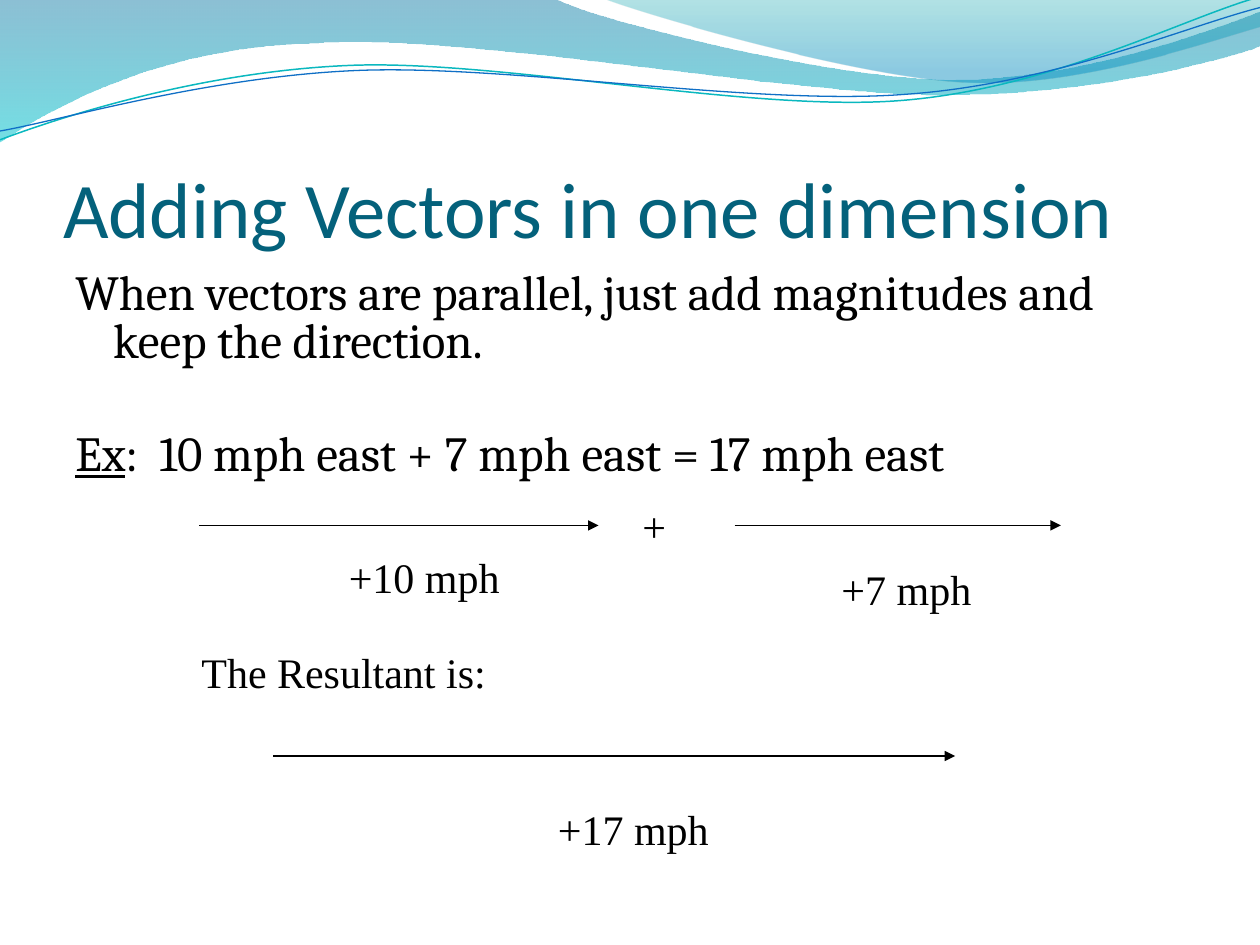
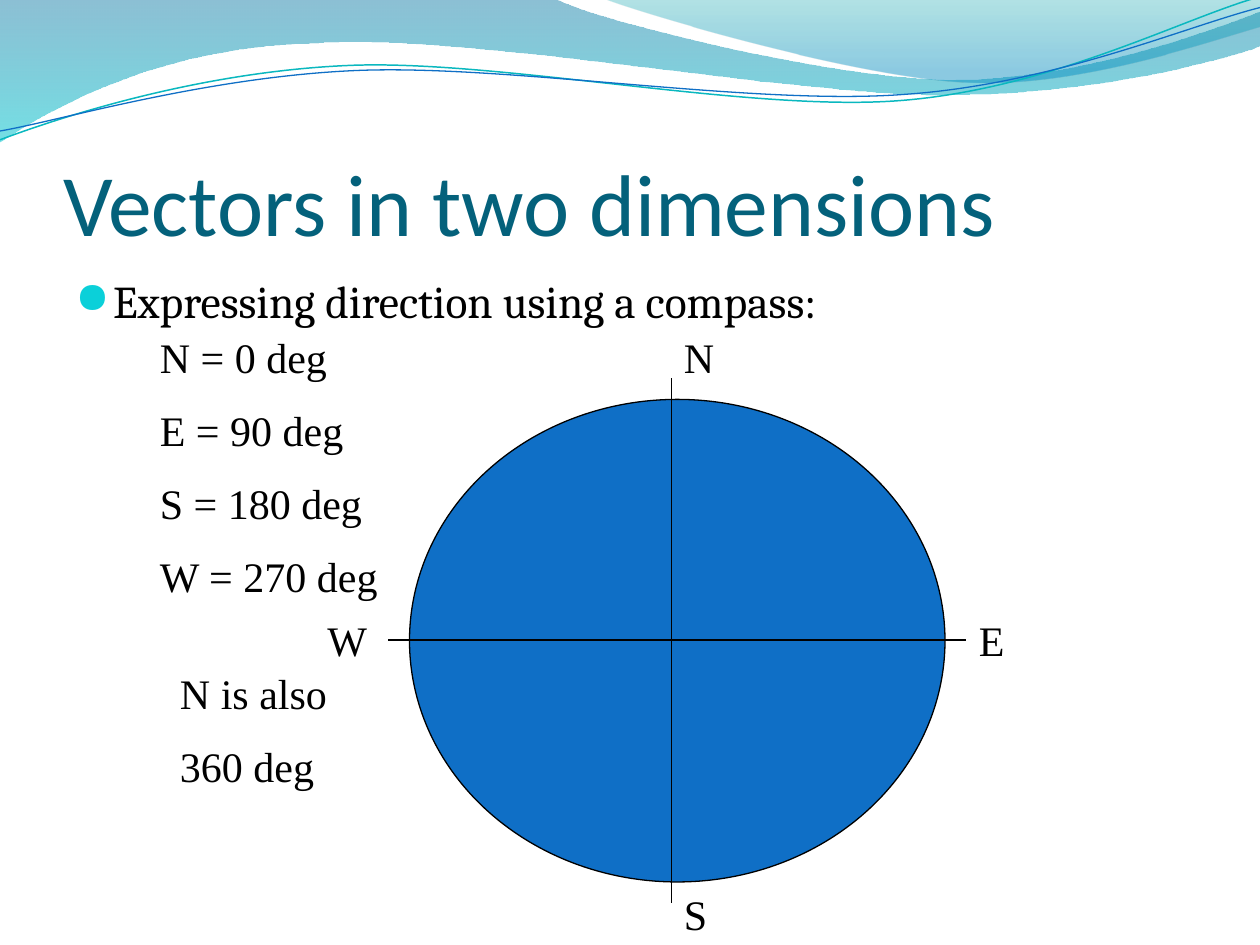
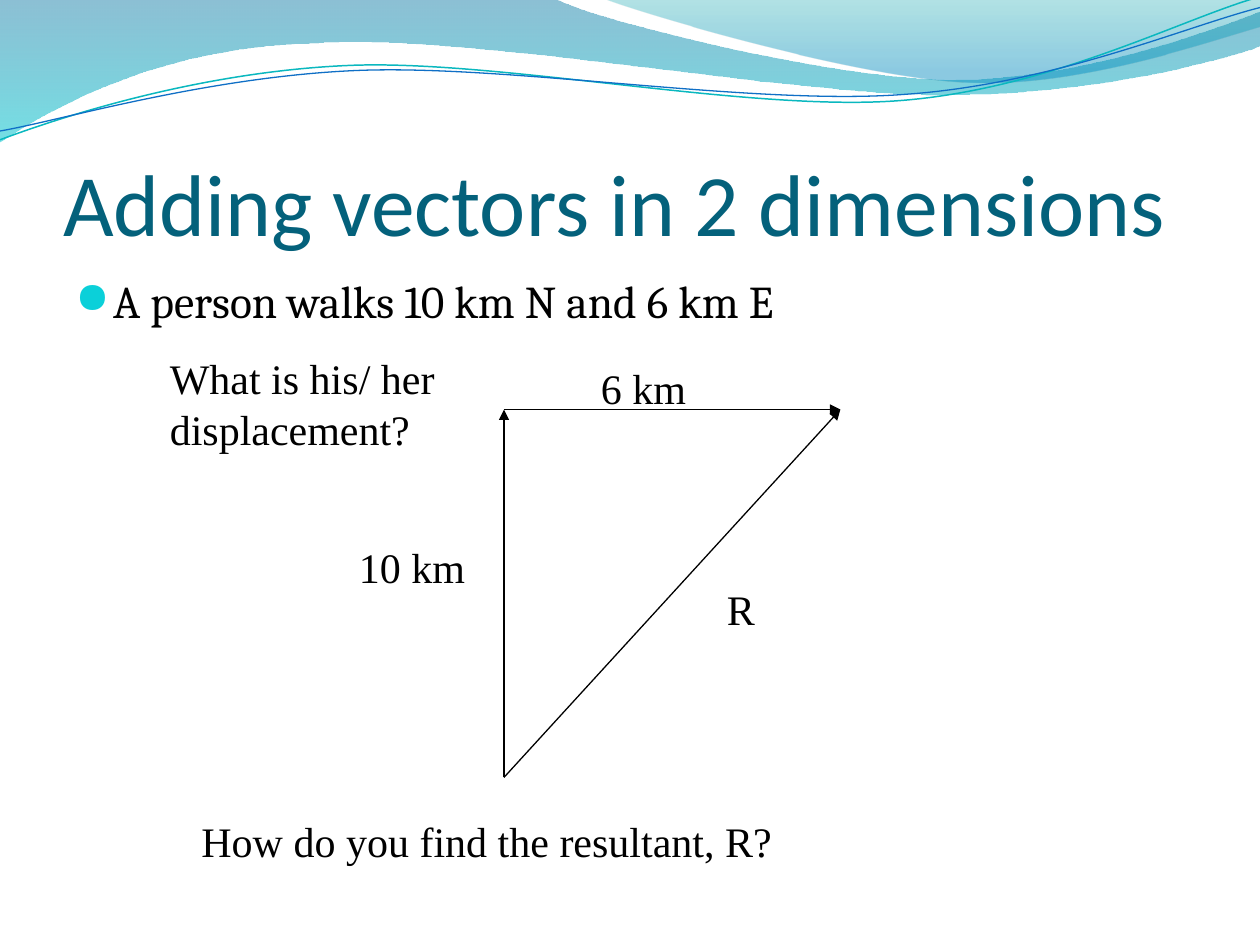
"""Build three physics slides on vectors under a shared wave banner."""
from itertools import islice

from pptx import Presentation
from pptx.dml.color import RGBColor
from pptx.enum.shapes import MSO_CONNECTOR, MSO_SHAPE
from pptx.enum.text import MSO_ANCHOR, MSO_AUTO_SIZE, PP_ALIGN
from pptx.oxml.ns import qn
from pptx.oxml.xmlchemy import OxmlElement
from pptx.util import Pt

PX = 9144
TITLE_ONLY = 5
COLORS = {
    "title": "04617B", "text": "000000", "line": "000000", "bullet": "0BD0D9",
    "disc": "0F6FC6", "teal line": "0AB8BF", "blue line": "0F6FC6",
    "deep blue": "0074A1", "cyan": "00C6CF", "green": "00A1A9", "sky": "008BBF",
}
STYLES = {
    "title": {"font": {"name": "Calibri", "size": Pt(50)}, "color": "title",
              "paragraph": {"alignment": PP_ALIGN.LEFT}},
    "body": {"font": {"name": "Cambria", "size": Pt(26)}, "color": "text",
             "paragraph": {"space_before": Pt(6)}},
    "label": {"font": {"name": "Times New Roman", "size": Pt(24)}, "color": "text",
              "paragraph": {"space_before": Pt(13)}},
}
TITLE_BOX = (50, 77, 900, 125)
BODY_BOX = (50, 212, 900, 480)
HANGING = 30

BANDS = [
    ((0, 0),
     [[(440, -1)],
      [(476, 17), (664, 63), (758, 63)], [(853, 63), (958, 26), (1000, 9)],
      [(1001, 36)],
      [(983, 44), (870, 76), (746, 75)], [(622, 75), (382, 28), (257, 34)],
      [(129, 36), (46, 83), (-1, 113)]],
     [(0, "deep blue", 45), (1, "cyan", 55)]),
    ((479, -1),
     [[(509, 11), (682, 62), (769, 65)], [(856, 69), (961, 32), (1000, 21)],
      [(1000, 0)]],
     [(0, "green", 30), (0.8, "sky", 45)]),
]
WAVE_LINES = [
    ((0, 111),
     [[(48, 93), (158, 57), (277, 52)], [(395, 47), (593, 89), (713, 80)],
      [(833, 71), (938, 15), (998, -2)]],
     "teal line", 0.85),
    ((0, 104),
     [[(47, 96), (164, 61), (283, 56)], [(403, 51), (597, 84), (717, 75)],
      [(836, 67), (941, 21), (1000, 6)]],
     "blue line", 0.75),
]


def rgb(name):
    return RGBColor.from_string(COLORS[name])


def apply(target, values):
    for name, value in values.items():
        setattr(target, name, value)


def add_child(parent, tag, **attributes):
    child = OxmlElement(tag)
    for name, value in attributes.items():
        child.set(name, str(value))
    parent.append(child)
    return child


class Deck:
    """Hold the presentation, its style and the current slide."""

    def __init__(self):
        self.presentation = Presentation()
        apply(self.presentation, {"slide_width": 1000 * PX, "slide_height": 750 * PX})
        self.slide = None

    def add_slide(self, title, size=50):
        layout = self.presentation.slide_layouts[TITLE_ONLY]
        self.slide = self.presentation.slides.add_slide(layout)
        shape = self.slide.shapes.title
        left, top, width, height = (value * PX for value in TITLE_BOX)
        apply(shape, {"left": left, "top": top, "width": width, "height": height})
        apply(shape.text_frame, {
            "vertical_anchor": MSO_ANCHOR.BOTTOM, "auto_size": MSO_AUTO_SIZE.NONE,
            "word_wrap": True, "margin_left": 0, "margin_top": 5 * PX,
            "margin_right": 0, "margin_bottom": 0})
        self.fill_text(shape.text_frame, [title], "title", size)

    def fill_text(self, frame, texts, style_name, size=None):
        style = STYLES[style_name]
        for index, runs in enumerate(texts):
            paragraph = frame.add_paragraph() if index else frame.paragraphs[0]
            apply(paragraph, style["paragraph"])
            for text, underline in [(runs, None)] if isinstance(runs, str) else runs:
                run = paragraph.add_run()
                run.text = text
                apply(run.font, {**style["font"], "underline": underline})
                run.font.color.rgb = rgb(style["color"])
                if size:
                    run.font.size = Pt(size)

    def text_box(self, box, texts, style_name, fit, size=None):
        shape = self.slide.shapes.add_textbox(*(value * PX for value in box))
        apply(shape.text_frame, {"word_wrap": True, "auto_size": fit})
        self.fill_text(shape.text_frame, texts, style_name, size)
        return shape.text_frame.paragraphs

    def label(self, left, top, width, *texts, height=50):
        self.text_box((left, top, width, height), texts, "label",
                      MSO_AUTO_SIZE.SHAPE_TO_FIT_TEXT)

    def body(self, *texts, size=26, bullet=True):
        paragraphs = self.text_box(BODY_BOX, texts, "body", MSO_AUTO_SIZE.NONE, size)
        for paragraph in paragraphs:
            properties = paragraph._p.get_or_add_pPr()
            properties.set("marL", str(HANGING * PX))
            properties.set("indent", str(-HANGING * PX))
            if bullet:
                color = add_child(properties, "a:buClr")
                add_child(color, "a:srgbClr", val=COLORS["bullet"])
                add_child(properties, "a:buSzPct", val=95000)
                add_child(properties, "a:buChar", char="●")
        return paragraphs

    def line(self, start, end, arrow=False):
        points = (value * PX for value in (*start, *end))
        connector = self.slide.shapes.add_connector(MSO_CONNECTOR.STRAIGHT, *points)
        connector.line.color.rgb = rgb("line")
        connector.line.width = Pt(0.75)
        if arrow:
            add_child(connector.line._get_or_add_ln(), "a:tailEnd", type="triangle")
        add_child(connector.element.spPr, "a:effectLst")

    def ellipse(self, box, color):
        shape = self.slide.shapes.add_shape(MSO_SHAPE.OVAL, *(v * PX for v in box))
        shape.shadow.inherit = False
        shape.fill.solid()
        shape.fill.fore_color.rgb = rgb(color)
        shape.line.color.rgb = rgb("line")
        shape.line.width = Pt(0.75)

    def curve(self, start, steps, close):
        builder = self.slide.shapes.build_freeform(*start, scale=PX)
        builder.add_line_segments([point for step in steps for point in step], close)
        shape = builder.convert_to_shape()
        shape.shadow.inherit = False
        segments = iter(list(shape.element.iter(qn("a:lnTo"))))
        for step in steps:
            group = list(islice(segments, len(step)))
            if len(step) == 3:
                bezier = OxmlElement("a:cubicBezTo")
                group[0].addprevious(bezier)
                for segment in group:
                    bezier.append(segment[0])
                    segment.getparent().remove(segment)
        return shape

    def band(self, start, steps, stops):
        shape = self.curve(start, steps, True)
        shape.line.fill.background()
        shape.fill.gradient()
        shape.fill.gradient_angle = 270
        for stop, (position, color, _) in zip(shape.fill.gradient_stops, stops):
            stop.position = position
            stop.color.rgb = rgb(color)
        colors = shape.element.spPr.iter(qn("a:srgbClr"))
        for element, (_, _, opacity) in zip(list(colors), stops):
            add_child(element, "a:alpha", val=opacity * 1000)
        return shape

    def wave_line(self, start, steps, color, width):
        shape = self.curve(start, steps, False)
        shape.fill.background()
        shape.line.color.rgb = rgb(color)
        shape.line.width = Pt(width)
        return shape

    def banner(self):
        shapes = [self.band(*band) for band in BANDS]
        shapes += [self.wave_line(*wave) for wave in WAVE_LINES]
        tree = self.presentation.slide_master.shapes.element
        for index, shape in enumerate(shapes):
            shape.element.nvSpPr.cNvPr.set("id", str(101 + index))
            tree.insert(2 + index, shape.element)


def one_dimension(deck):
    deck.add_slide("Adding Vectors in one dimension", size=45)
    deck.banner()
    paragraphs = deck.body(
        "When vectors are parallel, just add magnitudes and keep the direction.",
        [("Ex", True), (":  10 mph east + 7 mph east = 17 mph east", None)],
        size=28, bullet=False)
    for paragraph in paragraphs:
        paragraph.line_spacing = 0.8
    paragraphs[1].space_before = Pt(38)
    for left, right, y in [(158, 475, 417), (583, 842, 417), (217, 758, 600)]:
        deck.line((left, y), (right, y), arrow=True)
    deck.label(267, 433, 183, "+10 mph")
    deck.label(658, 442, 192, "+7 mph")
    deck.label(500, 392, 50, "+")
    deck.label(150, 508, 292, "The Resultant is:")
    deck.label(433, 633, 217, "+17 mph")


def compass(deck):
    deck.add_slide("Vectors in two dimensions")
    deck.body("Expressing direction using a compass:")
    deck.ellipse((325, 317, 425, 383), "disc")
    deck.line((533, 300), (533, 717))
    deck.line((308, 508), (767, 508))
    for left, top, width, point in [(533, 258, 50, "N"), (533, 700, 50, "S"),
                                    (767, 483, 33, "E"), (250, 483, 33, "W")]:
        deck.label(left, top, width, point)
    bearings = [f"{point} = {90 * turn} deg" for turn, point in enumerate("NESW")]
    deck.label(117, 258, 208, *bearings, height=230)
    deck.label(133, 525, 142, "N is also", "360 deg", height=110)


def two_dimensions(deck):
    deck.add_slide("Adding vectors in 2 dimensions")
    deck.body("A person walks 10 km N and 6 km E")
    deck.label(125, 275, 350, "What is his/ her displacement?", height=91)
    origin, corner, goal = (400, 617), (400, 325), (667, 325)
    for start, end in [(origin, corner), (corner, goal), (origin, goal)]:
        deck.line(start, end, arrow=True)
    deck.label(275, 425, 117, "10 km")
    deck.label(467, 283, 100, "6 km")
    deck.label(567, 458, 50, "R")
    deck.label(150, 642, 758, "How do you find the resultant, R?")


def main():
    deck = Deck()
    for build in (one_dimension, compass, two_dimensions):
        build(deck)
    deck.presentation.save("out.pptx")


if __name__ == "__main__":
    main()
